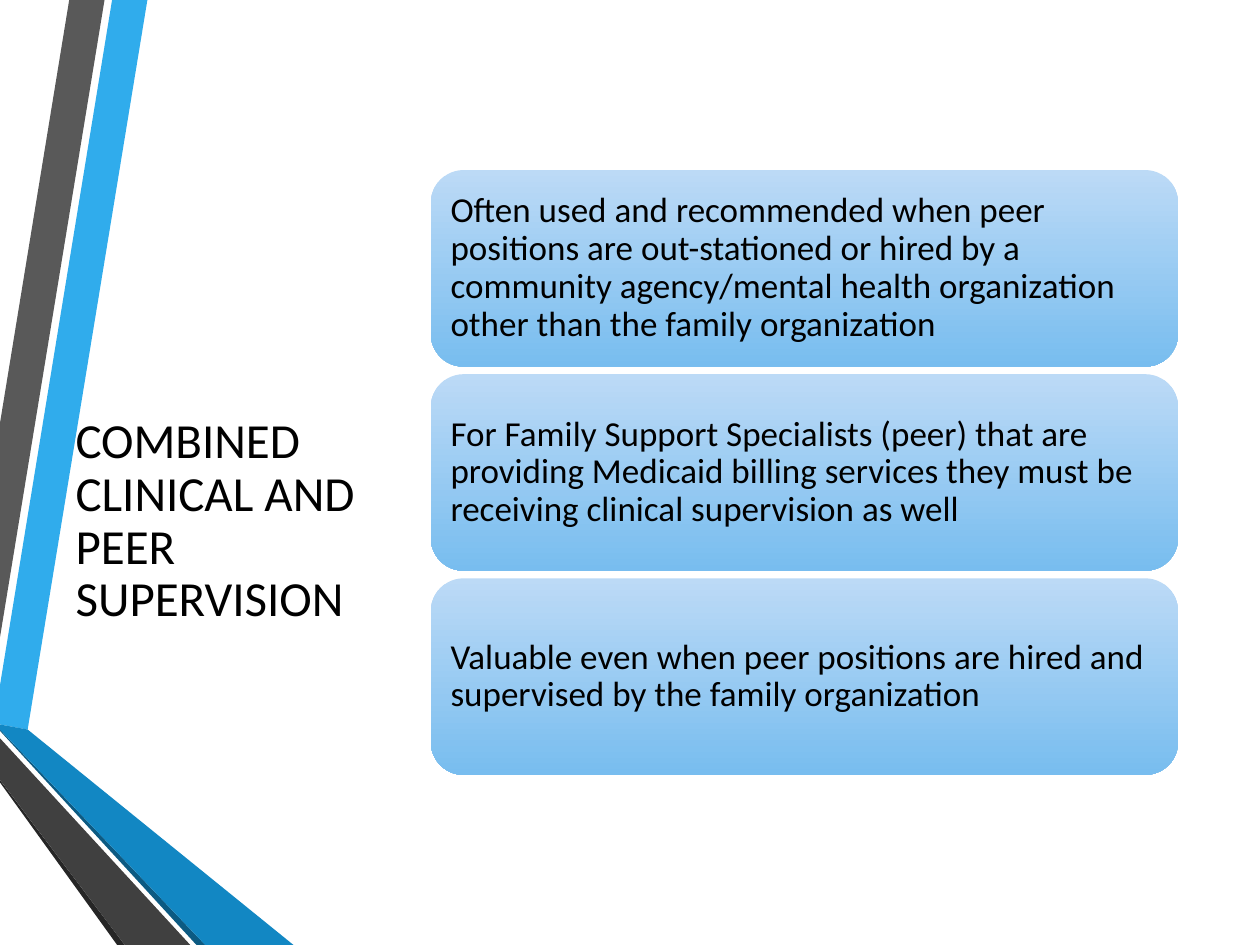
from pptx import Presentation
from pptx.dml.color import RGBColor
from pptx.enum.shapes import MSO_SHAPE
from pptx.enum.text import MSO_ANCHOR, MSO_AUTO_SIZE, PP_ALIGN
from pptx.util import Inches, Pt

ROUND = MSO_SHAPE.ROUNDED_RECTANGLE
TOP, MIDDLE = MSO_ANCHOR.TOP, MSO_ANCHOR.MIDDLE
LEFT = PP_ALIGN.LEFT
FIXED = MSO_AUTO_SIZE.NONE

# Content
TITLE = "COMBINED CLINICAL AND PEER SUPERVISION"
POINTS = [
    "Often used and recommended when peer positions are out-stationed or hired "
    "by a community agency/mental health organization other than the family "
    "organization",
    "For Family Support Specialists (peer) that are providing Medicaid billing "
    "services they must be receiving clinical supervision as well",
    "Valuable even when peer positions are hired and supervised by the family "
    "organization",
]

# Ribbon bands, back to front: colour and corners in inches
BANDS = [
    ("30ACEC", [(0, 5.44), (0, 5.75), (0.22, 5.79), (1.17, 0), (0.89, 0)]),
    ("595959", [(0.83, 0), (0.55, 0), (0, 3.36), (0, 5.06)]),
    ("262626", [(0, 6.19), (0, 6.21), (0.93, 7.5), (0.99, 7.5)]),
    ("0C5A82", [(0, 5.79), (0, 5.8), (1.56, 7.5), (1.63, 7.5)]),
    ("1287C3", [(0, 5.79), (1.63, 7.5), (2.33, 7.5), (0.22, 5.79), (0, 5.75)]),
    ("404040", [(0, 6.19), (0.99, 7.5), (1.51, 7.5), (0, 5.86)]),
]

# Format
INK = "000000"
SHADES = ["BCDAF6", "78BDEF"]
BOX_X, BOX_Y, BOX_W, BOX_H, STEP = 3.42, 1.35, 5.93, 1.56, 1.62
PAD = Inches(0.08)
FRAME = {"word_wrap": True, "auto_size": FIXED}
TITLE_FRAME = {**FRAME, "vertical_anchor": TOP}
BOX_FRAME = {**FRAME, "vertical_anchor": MIDDLE, "margin_left": PAD,
             "margin_right": PAD, "margin_top": PAD, "margin_bottom": PAD}
PARA = {"alignment": LEFT, "line_spacing": 0.9}
BOX_PARA = {**PARA, "space_after": Pt(7)}


def style(item, values):
    for name, value in values.items():
        setattr(item, name, value)


def paint(color, code):
    color.rgb = RGBColor.from_string(code)


def write(shape, text, size, frame, para):
    style(shape.text_frame, frame)
    line = shape.text_frame.paragraphs[0]
    style(line, para)
    run = line.add_run()
    run.text = text
    style(run.font, {"name": "Calibri", "size": Pt(size)})
    paint(run.font.color, INK)


def add_band(shapes, code, points):
    spots = [(Inches(x), Inches(y)) for x, y in points]
    maker = shapes.build_freeform(*spots[0])
    maker.add_line_segments(spots[1:], close=True)
    band = maker.convert_to_shape()
    band.shadow.inherit = False
    band.fill.solid()
    paint(band.fill.fore_color, code)
    band.line.fill.background()


def add_box(shapes, row, text):
    box = shapes.add_shape(ROUND, Inches(BOX_X), Inches(BOX_Y + row * STEP),
                           Inches(BOX_W), Inches(BOX_H))
    box.shadow.inherit = False
    box.line.fill.background()
    box.fill.gradient()
    box.fill.gradient_angle = 270
    for stop, code in zip(box.fill.gradient_stops, SHADES):
        paint(stop.color, code)
    write(box, text, 20, BOX_FRAME, BOX_PARA)


def main():
    deck = Presentation()
    style(deck, {"slide_width": Inches(10), "slide_height": Inches(7.5)})
    slide = deck.slides.add_slide(deck.slide_layouts[5])
    shapes = slide.shapes

    # Ribbon
    for code, points in BANDS:
        add_band(shapes, code, points)

    # Title, raised above the ribbon
    title = shapes.title
    shapes.element.append(title.element)
    style(title, {"left": Inches(0.5), "top": Inches(3.25),
                  "width": Inches(2.74), "height": Inches(2.72)})
    write(title, TITLE, 28, TITLE_FRAME, PARA)

    # Stacked boxes
    for row, text in enumerate(POINTS):
        add_box(shapes, row, text)

    deck.save("out.pptx")


if __name__ == "__main__":
    main()
